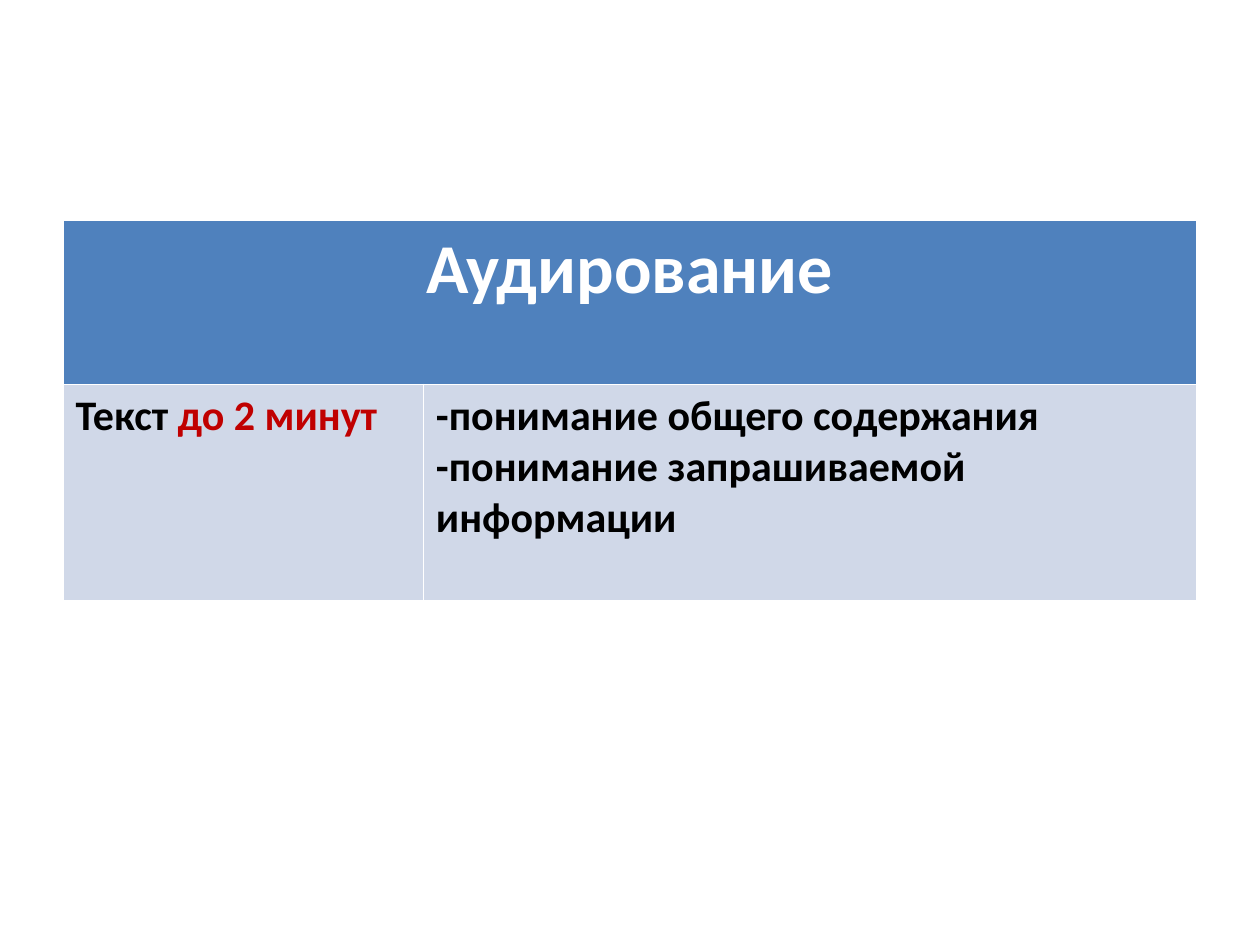
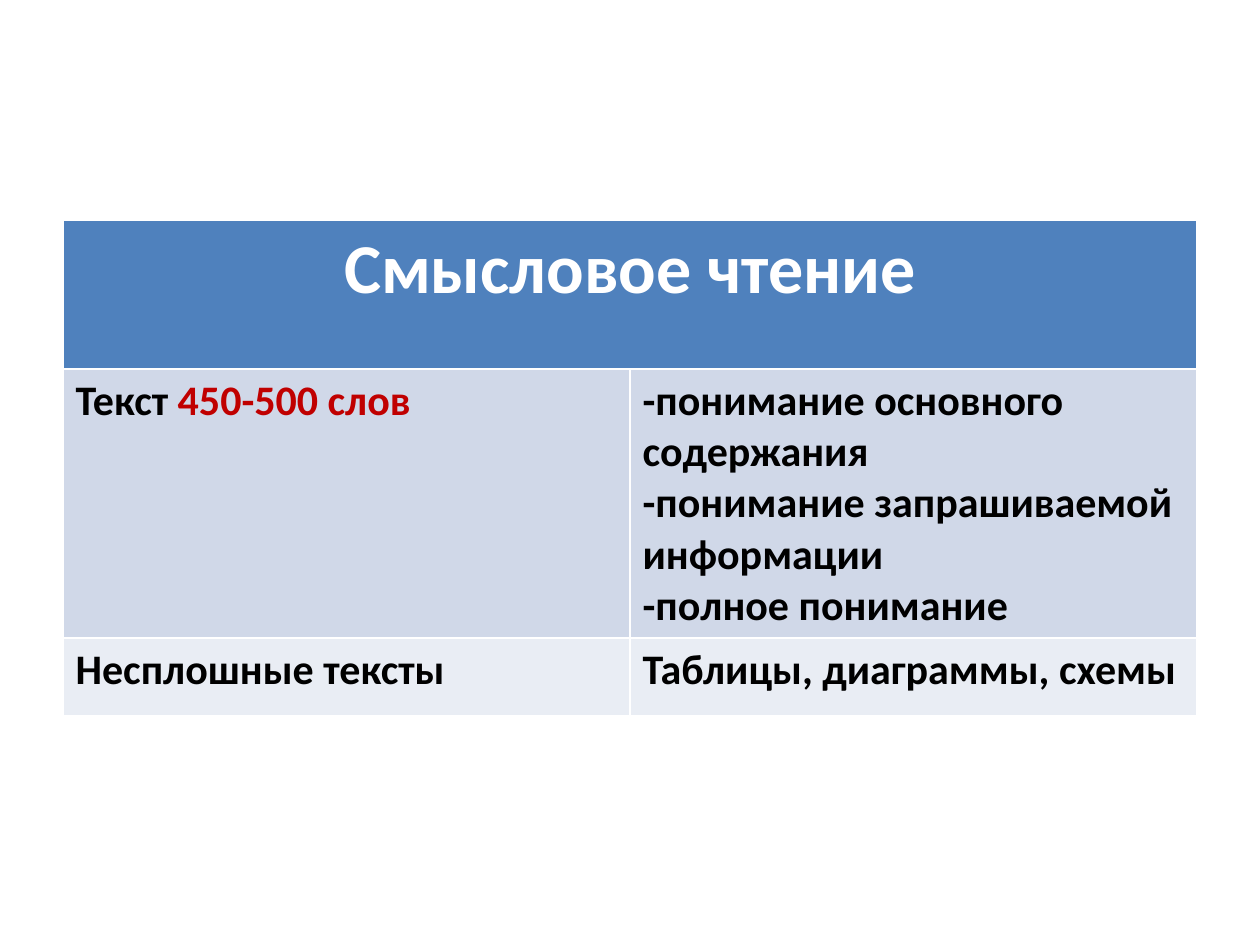
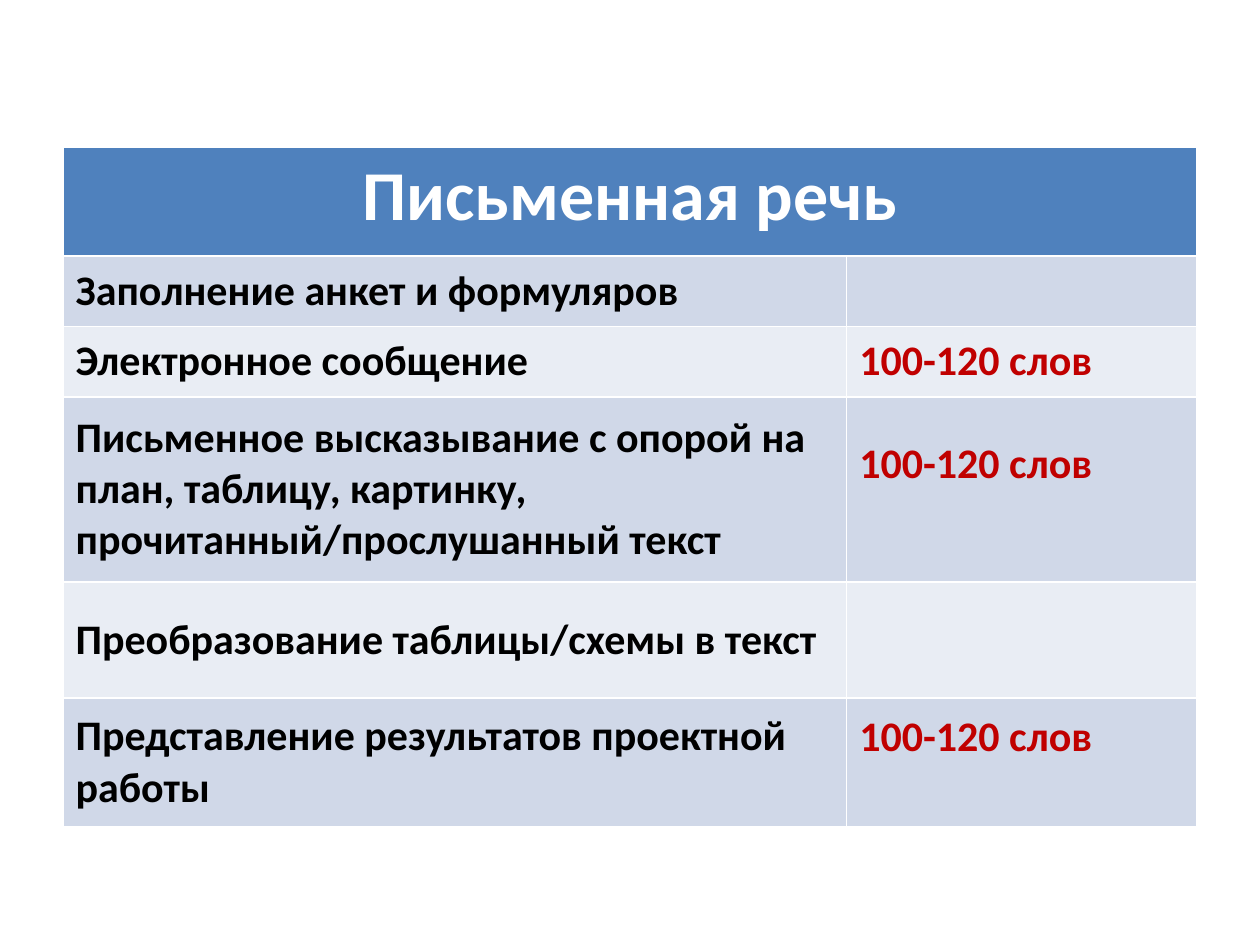
from pptx import Presentation
from pptx.dml.color import RGBColor
from pptx.enum import text
from pptx.util import Inches, Pt

COLORS = {
    "header": "4F81BD",
    "odd_row": "D0D8E8",
    "even_row": "E9EDF4",
    "header_text": "FFFFFF",
    "body_text": "000000",
    "limit": "C00000",
}
FONT = "Calibri"
TABLE_LEFT = 0.5
BLANK_LAYOUT = 6
TOP, MIDDLE = text.MSO_ANCHOR.TOP, text.MSO_ANCHOR.MIDDLE
WORD_LIMIT = [[("100-120 слов", "limit")]]

# A cell is a list of paragraphs; a paragraph is a string or a list of (text, colour) runs.
SKILLS = [
    {
        "title": "Аудирование",
        "top": 1.75,
        "columns": [2.86, 6.14],
        "heights": [1.3, 1.72],
        "anchor": TOP,
        "rows": [
            (
                [[("Текст ", "body_text"), ("до 2 минут", "limit")]],
                ["-понимание общего содержания", "-понимание запрашиваемой информации"],
            ),
        ],
    },
    {
        "title": "Смысловое чтение",
        "top": 1.75,
        "columns": [4.5, 4.5],
        "heights": [1.18, 2, 0.62],
        "anchor": TOP,
        "rows": [
            (
                [[("Текст ", "body_text"), ("450-500 слов", "limit")]],
                [
                    "-понимание основного содержания",
                    "-понимание запрашиваемой информации",
                    "-полное понимание",
                ],
            ),
            (["Несплошные тексты"], ["Таблицы, диаграммы, схемы"]),
        ],
    },
    {
        "title": "Письменная речь",
        "top": 1.17,
        "columns": [6.22, 2.78],
        "heights": [0.86, 0.56, 0.56, 1.47, 0.92, 1.02],
        "anchor": MIDDLE,
        "raised_limits": [3, 5],
        "rows": [
            (["Заполнение анкет и формуляров"], []),
            (["Электронное сообщение"], WORD_LIMIT),
            (
                ["Письменное высказывание с опорой на план, таблицу, картинку, "
                 "прочитанный/прослушанный текст"],
                WORD_LIMIT,
            ),
            (["Преобразование таблицы/схемы в текст"], []),
            (["Представление результатов проектной работы"], WORD_LIMIT),
        ],
    },
]


def write_cell(cell, paragraphs, *, fill, color="body_text", size=24,
               align=text.PP_ALIGN.LEFT, anchor=TOP):
    cell.fill.solid()
    cell.fill.fore_color.rgb = RGBColor.from_string(COLORS[fill])
    cell.vertical_anchor = anchor
    for index, content in enumerate(paragraphs):
        frame = cell.text_frame
        paragraph = frame.add_paragraph() if index else frame.paragraphs[0]
        paragraph.alignment = align
        runs = [(content, color)] if isinstance(content, str) else content
        for words, run_color in runs:
            run = paragraph.add_run()
            run.text = words
            run.font.name = FONT
            run.font.size = Pt(size)
            run.font.bold = True
            run.font.color.rgb = RGBColor.from_string(COLORS[run_color])


def add_skill_slide(presentation, skill):
    slide = presentation.slides.add_slide(presentation.slide_layouts[BLANK_LAYOUT])
    columns, heights = skill["columns"], skill["heights"]
    table = slide.shapes.add_table(
        len(heights), len(columns), Inches(TABLE_LEFT), Inches(skill["top"]),
        Inches(sum(columns)), Inches(sum(heights)),
    ).table
    for column, width in zip(table.columns, columns):
        column.width = Inches(width)
    for row, height in zip(table.rows, heights):
        row.height = Inches(height)

    header = table.cell(0, 0)
    header.merge(table.cell(0, len(columns) - 1))
    write_cell(header, [skill["title"]], fill="header", color="header_text",
               size=40, align=text.PP_ALIGN.CENTER)
    for row_index, row in enumerate(skill["rows"], start=1):
        fill = "odd_row" if row_index % 2 else "even_row"
        for column_index, paragraphs in enumerate(row):
            write_cell(table.cell(row_index, column_index), paragraphs,
                       fill=fill, anchor=skill["anchor"])
    for row_index in skill.get("raised_limits", []):
        table.cell(row_index, 1).margin_bottom = Inches(0.45)


def main():
    presentation = Presentation()
    presentation.slide_width = Inches(10)
    presentation.slide_height = Inches(7.5)
    for skill in SKILLS:
        add_skill_slide(presentation, skill)
    presentation.save("out.pptx")


if __name__ == "__main__":
    main()
